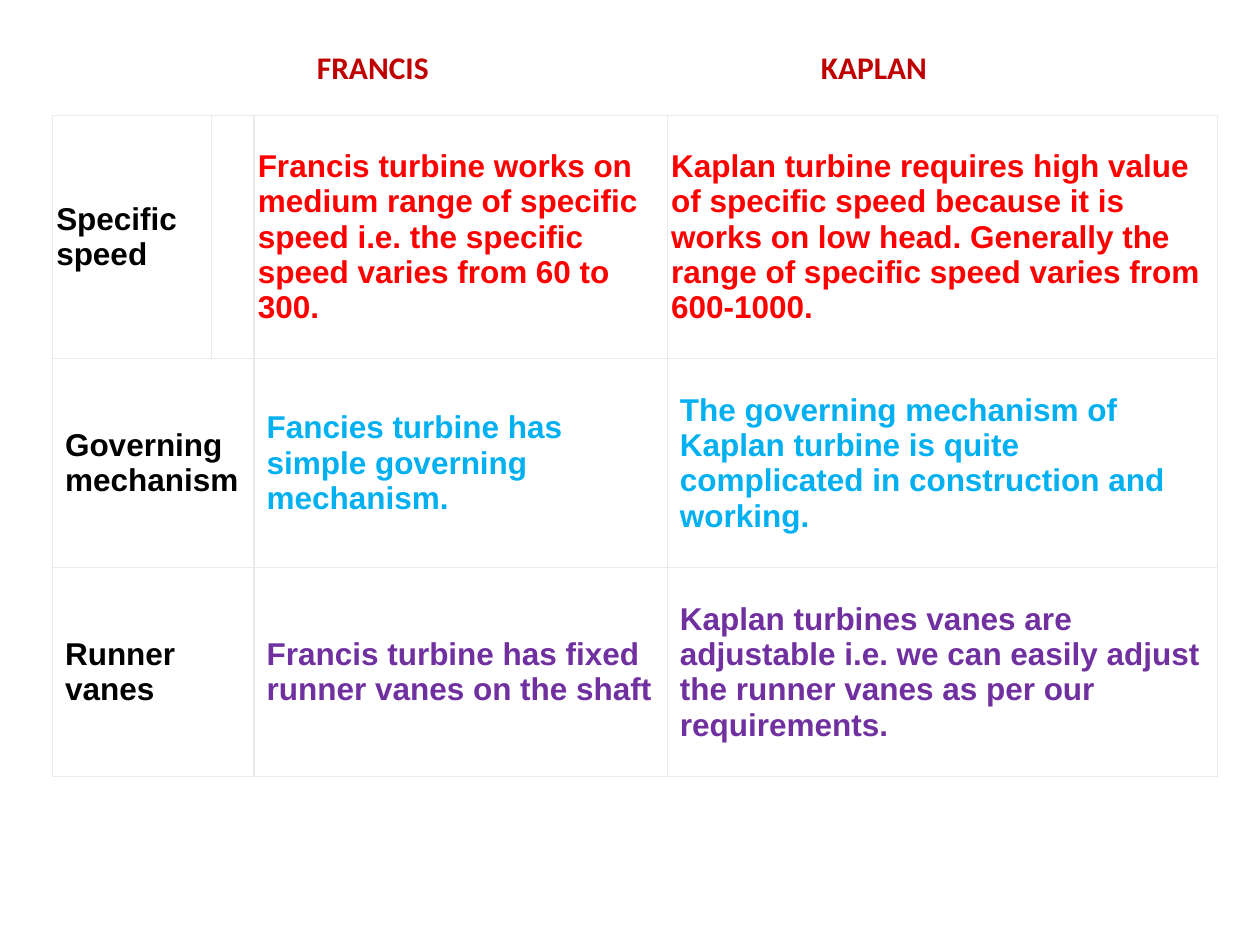
from lxml import etree
from pptx import Presentation
from pptx.dml.color import RGBColor
from pptx.enum import text
from pptx.oxml import ns
from pptx.util import Pt

COLORS = {
    "white": "FFFFFF",
    "grid": "EAEAEA",
    "label": "000000",
    "heading": "C00000",
    "speed": "FF0000",
    "governing": "00B0F0",
    "vanes": "7030A0",
}
COLUMN_WIDTHS = [90.7, 24.5, 236.2, 314.6]
ROW_HEIGHTS = [139, 119.5, 119.5]
TIGHT, ROOMY = (2.16, 1.44), (7.2, 4.32)  # horizontal and vertical cell margins

# Label, Francis text, Kaplan text, text colour, margins
ROWS = [
    ("Specific speed",
     "Francis turbine works on medium range of specific speed i.e. the specific "
     "speed varies from 60 to 300.",
     "Kaplan turbine requires high value of specific speed because it is works on "
     "low head. Generally the range of specific speed varies from 600-1000.",
     "speed", TIGHT),
    ("Governing mechanism",
     "Fancies turbine has simple governing mechanism.",
     "The governing mechanism of Kaplan turbine is quite complicated in "
     "construction and working.",
     "governing", ROOMY),
    ("Runner vanes",
     "Francis turbine has fixed runner vanes on the shaft",
     "Kaplan turbines vanes are adjustable i.e. we can easily adjust the runner "
     "vanes as per our requirements.",
     "vanes", ROOMY),
]


def write(frame, words, font, color):
    """Put bold 18 pt words into a text frame."""
    frame.text = words
    for span in frame.paragraphs[0].runs:
        span.font.name = font
        span.font.size = Pt(18)
        span.font.bold = True
        span.font.color.rgb = RGBColor.from_string(COLORS[color])


def style_cell(cell, margins):
    """Give a cell its margins, thin borders and white fill."""
    cell.margin_left = cell.margin_right = Pt(margins[0])
    cell.margin_top = cell.margin_bottom = Pt(margins[1])
    cell.vertical_anchor = text.MSO_ANCHOR.MIDDLE
    properties = cell._tc.get_or_add_tcPr()
    for side in ("lnL", "lnR", "lnT", "lnB"):
        line = etree.SubElement(properties, ns.qn(f"a:{side}"), w=str(Pt(0.75)))
        fill = etree.SubElement(line, ns.qn("a:solidFill"))
        etree.SubElement(fill, ns.qn("a:srgbClr"), val=COLORS["grid"])
    cell.fill.solid()
    cell.fill.fore_color.rgb = RGBColor.from_string(COLORS["white"])


def add_comparison(page, left, top, width, height):
    """Table comparing the two turbines."""
    table = page.shapes.add_table(
        len(ROWS), len(COLUMN_WIDTHS), Pt(left), Pt(top), Pt(width), Pt(height)).table
    table.first_row = table.horz_banding = False
    for column, column_width in zip(table.columns, COLUMN_WIDTHS):
        column.width = Pt(column_width)
    for index, (label, francis, kaplan, color, margins) in enumerate(ROWS):
        table.rows[index].height = Pt(ROW_HEIGHTS[index])
        for column in range(len(COLUMN_WIDTHS)):
            style_cell(table.cell(index, column), margins)
        # Labels span the narrow second column below the first row
        if index > 0:
            table.cell(index, 0).merge(table.cell(index, 1))
        entries = [(0, label, "label"), (2, francis, color), (3, kaplan, color)]
        for column, words, shade in entries:
            write(table.cell(index, column).text_frame, words, "Arial", shade)


def add_headings(page, left, top, width, height):
    """Turbine names on one line, parted by a tab stop."""
    box = page.shapes.add_textbox(Pt(left), Pt(top), Pt(width), Pt(height))
    frame = box.text_frame
    frame.word_wrap = True
    frame.auto_size = text.MSO_AUTO_SIZE.SHAPE_TO_FIT_TEXT
    write(frame, "FRANCIS\tKAPLAN", "Calibri", "heading")
    properties = frame.paragraphs[0]._p.get_or_add_pPr()
    stops = etree.SubElement(properties, ns.qn("a:tabLst"))
    etree.SubElement(stops, ns.qn("a:tab"), pos=str(Pt(288)), algn="l")


def main():
    deck = Presentation()
    deck.slide_width, deck.slide_height = Pt(720), Pt(540)
    page = deck.slides.add_slide(deck.slide_layouts[6])
    add_comparison(page, 30, 66, sum(COLUMN_WIDTHS), sum(ROW_HEIGHTS))
    add_headings(page, 174, 24, 498, 29)
    deck.save("out.pptx")


if __name__ == "__main__":
    main()
